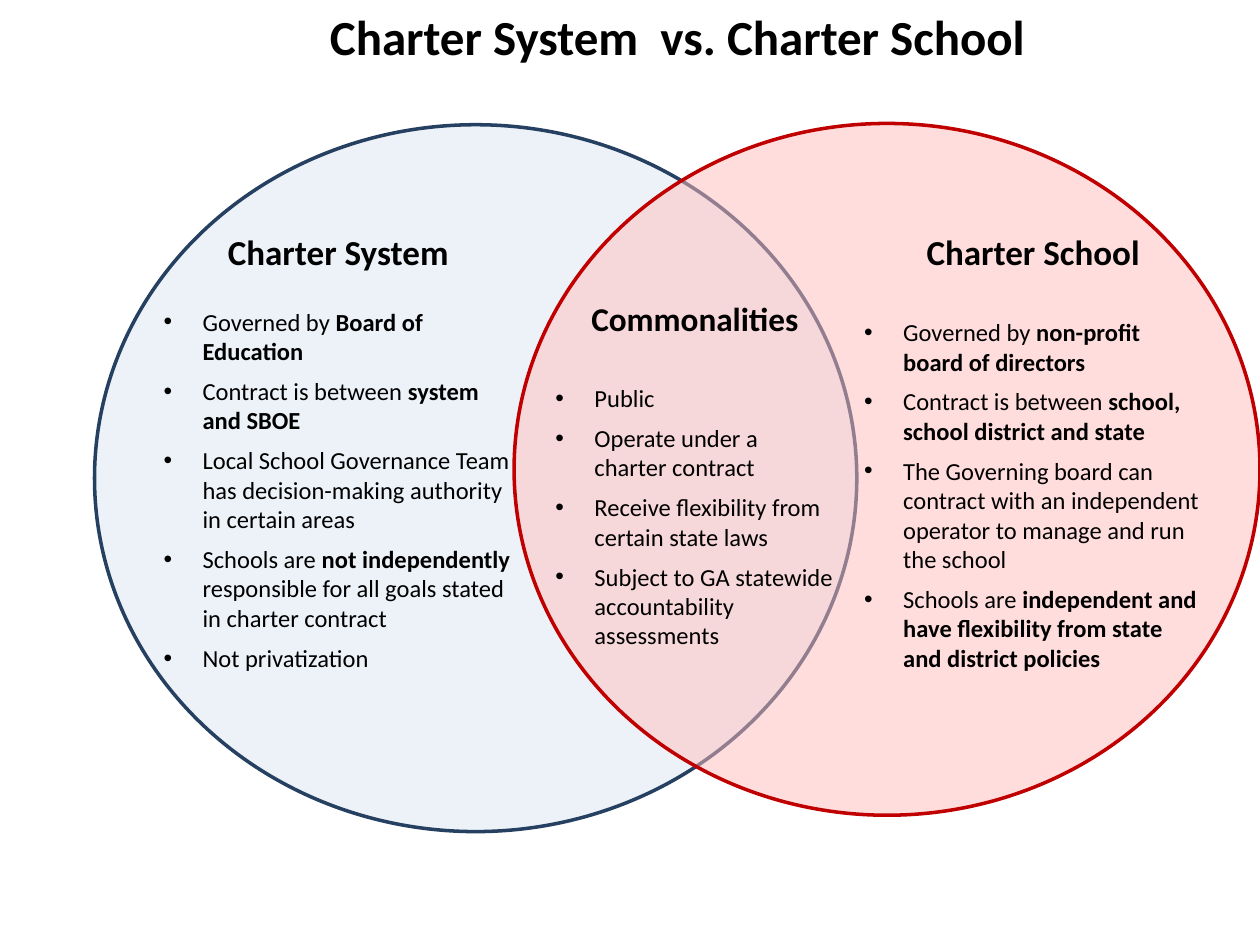
import pptx
import pptx.dml.color
import pptx.enum.shapes
import pptx.enum.text
import pptx.oxml.ns
import pptx.util
from lxml import etree
from pptx.util import Inches

THEME = {
    "font": "Calibri",
    "text": "000000",
    "system": ("DCE6F2", "254061"),
    "school": ("FFBDBD", "C00000"),
    "title_size": 28,
    "heading_size": 20,
    "middle_heading_size": 19,
    "body_size": 14,
}


def add_text_box(left, top, width, height):
    box = slide.shapes.add_textbox(Inches(left), Inches(top), Inches(width), Inches(height))
    box.text_frame.word_wrap = True
    box.text_frame.auto_size = pptx.enum.text.MSO_AUTO_SIZE.SHAPE_TO_FIT_TEXT
    return box.text_frame


def add_run(paragraph, text, size, bold):
    run = paragraph.add_run()
    run.text = text
    run.font.name = THEME["font"]
    run.font.size = pptx.util.Pt(size)
    run.font.bold = bold
    run.font.color.rgb = pptx.dml.color.RGBColor.from_string(THEME["text"])


deck = pptx.Presentation()
deck.slide_width = Inches(10)
deck.slide_height = Inches(7.5)
slide = deck.slides.add_slide(deck.slide_layouts[6])

circles = [
    ("system", 0.75, 0.99, 6.05, 5.61),
    ("school", 4.08, 0.98, 5.92, 5.49),
]
for side, left, top, width, height in circles:
    fill_color, line_color = THEME[side]
    circle = slide.shapes.add_shape(
        pptx.enum.shapes.MSO_SHAPE.OVAL,
        Inches(left), Inches(top), Inches(width), Inches(height),
    )
    circle.shadow.inherit = False
    circle.fill.solid()
    circle.fill.fore_color.rgb = pptx.dml.color.RGBColor.from_string(fill_color)
    color = circle.fill._xPr.find(".//" + pptx.oxml.ns.qn("a:srgbClr"))
    etree.SubElement(color, pptx.oxml.ns.qn("a:alpha"), val="50000")
    circle.line.color.rgb = pptx.dml.color.RGBColor.from_string(line_color)
    circle.line.width = pptx.util.Pt(2)

sections = [
    ("Charter School", THEME["heading_size"], 19.5, (6.76, 1.78, 2.88, 3.64), [
        [("Governed by ", False), ("non-profit board of directors", True)],
        [("Contract is between ", False), ("school, school district and state", True)],
        [("The Governing board can contract with an independent operator "
          "to manage and run the school", False)],
        [("Schools are ", False),
         ("independent and have flexibility from state and district policies", True)],
    ]),
    ("Charter System", THEME["heading_size"], 13.5, (1.2, 1.78, 2.97, 3.7), [
        [("Governed by ", False), ("Board of Education", True)],
        [("Contract is between ", False), ("system and SBOE", True)],
        [("Local School Governance Team has decision-making authority in certain areas", False)],
        [("Schools are ", False), ("not independently ", True),
         ("responsible for all goals stated in charter contract", False)],
        [("Not privatization", False)],
    ]),
    ("Commonalities", THEME["middle_heading_size"], 19.5, (4.31, 2.32, 2.41, 2.93), [
        [("Public", False)],
        [("Operate under a charter contract", False)],
        [("Receive flexibility from certain state laws", False)],
        [("Subject to GA statewide accountability assessments", False)],
    ]),
]
for heading, heading_size, heading_gap, place, points in sections:
    section = add_text_box(*place)
    heading_line = section.paragraphs[0]
    heading_line.alignment = pptx.enum.text.PP_ALIGN.CENTER
    heading_line.space_after = pptx.util.Pt(heading_gap)
    add_run(heading_line, heading, heading_size, True)
    for point in points:
        point_line = section.add_paragraph()
        point_line.space_before = pptx.util.Pt(6)
        properties = point_line._p.get_or_add_pPr()
        properties.set("marL", str(Inches(0.31)))
        properties.set("indent", str(Inches(-0.31)))
        etree.SubElement(properties, pptx.oxml.ns.qn("a:buFont"), typeface="Arial")
        etree.SubElement(properties, pptx.oxml.ns.qn("a:buChar"), char="•")
        for text, bold in point:
            add_run(point_line, text, THEME["body_size"], bold)

title = add_text_box(1.57, 0, 7.61, 0.57)
title_line = title.paragraphs[0]
title_line.alignment = pptx.enum.text.PP_ALIGN.CENTER
add_run(title_line, "Charter System  vs. Charter School", THEME["title_size"], True)

deck.save("out.pptx")
